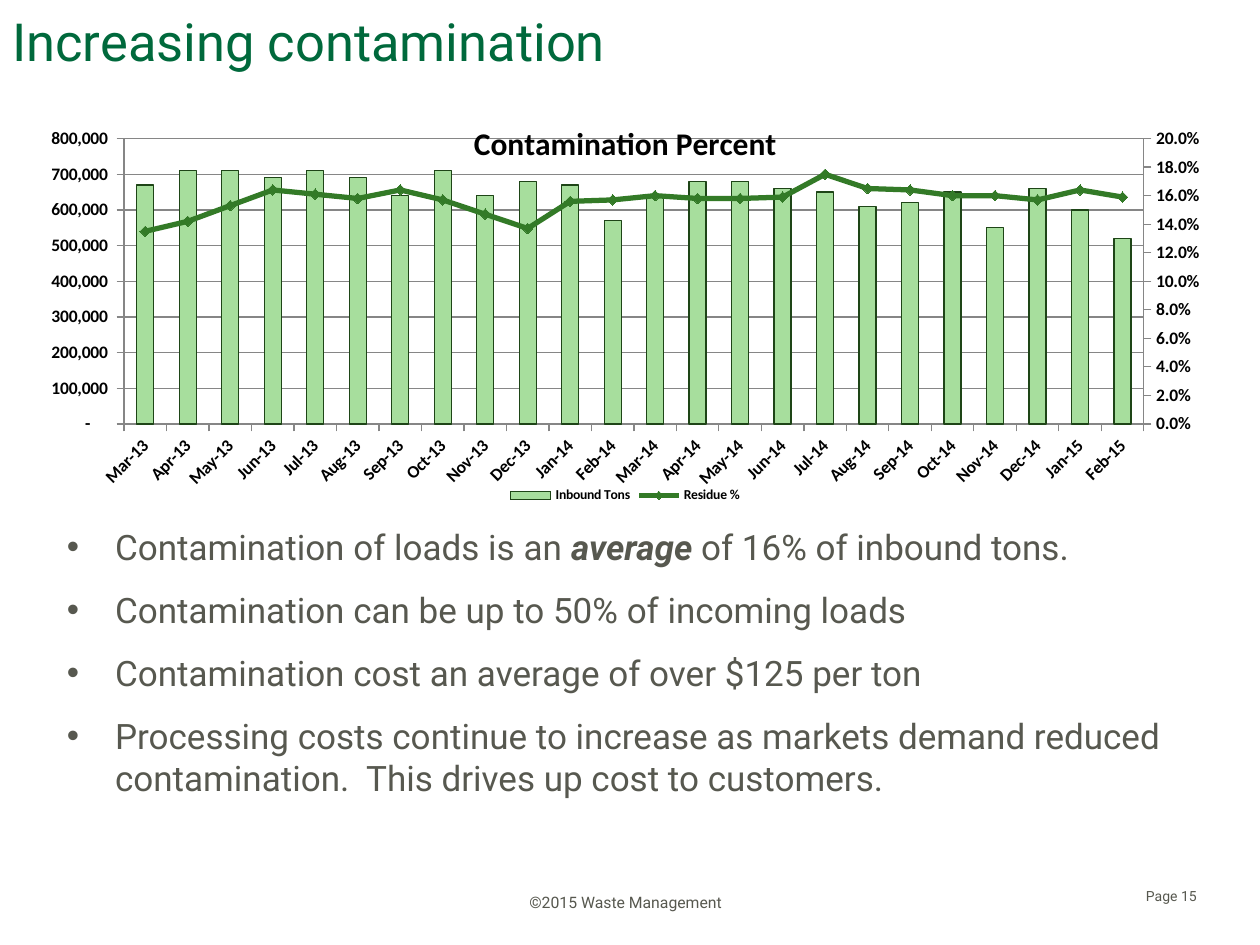
"""Build the contamination slide with a combined column and line chart."""
import copy

from lxml import etree
from pptx import Presentation
from pptx import util as u
from pptx.chart.data import CategoryChartData
from pptx.dml.color import RGBColor
from pptx.enum import chart as charts, text
from pptx.oxml import parse_xml
from pptx.oxml.ns import nsdecls, qn

COLORS = {
    "title": "00693C", "body": "57584F", "black": "000000", "grid": "868686",
    "column": "A7DE9D", "column_edge": "1E4517", "line": "337A27",
}
MONTHS = "Jan Feb Mar Apr May Jun Jul Aug Sep Oct Nov Dec".split()
CATEGORIES = [f"{MONTHS[i % 12]}-{13 + i // 12}" for i in range(2, 26)]
TONS_THOUSANDS = [670, 710, 710, 690, 710, 690, 640, 710, 640, 680, 670, 570,
                  640, 680, 680, 660, 650, 610, 620, 650, 550, 660, 600, 520]
RESIDUE = [0.135, 0.142, 0.153, 0.164, 0.161, 0.158, 0.164, 0.157,
           0.147, 0.137, 0.156, 0.157, 0.16, 0.158, 0.158, 0.159,
           0.175, 0.165, 0.164, 0.16, 0.16, 0.157, 0.164, 0.159]
BULLETS = [
    [("Contamination of loads is an ", False), ("average ", True),
     ("of 16% of inbound tons.", False)],
    [("Contamination can be up to 50% of incoming loads", False)],
    [("Contamination cost an average of over $125 per ton", False)],
    [("Processing costs continue to increase as markets demand reduced "
      "contamination.  This drives up cost to customers.", False)],
]
TONS_FORMAT = r'_(* #,##0_);_(* \(#,##0\);_(* "-"??_);_('


def color(name):
    return RGBColor.from_string(COLORS[name])


def style_font(font, size, color_name, bold=False, name="Roboto"):
    font.name, font.size, font.bold = name, u.Pt(size), bold
    font.color.rgb = color(color_name)


def add_run(paragraph, words, size, color_name, emphasis=False):
    run = paragraph.add_run()
    run.text = words
    style_font(run.font, size, color_name, emphasis)
    run.font.italic = emphasis


def add_box(slide, left, top, width, height, anchor=text.MSO_ANCHOR.TOP):
    shape = slide.shapes.add_textbox(u.Cm(left), u.Cm(top), u.Cm(width), u.Cm(height))
    frame = shape.text_frame
    frame.word_wrap = True
    frame.vertical_anchor = anchor
    frame.margin_left = frame.margin_top = frame.margin_right = frame.margin_bottom = 0
    return frame


def add_label(slide, box, words, size, color_name, align, anchor=text.MSO_ANCHOR.BOTTOM):
    paragraph = add_box(slide, *box, anchor).paragraphs[0]
    paragraph.alignment = align
    add_run(paragraph, words, size, color_name)
    return paragraph


def add_bullets(slide, box, items):
    frame = add_box(slide, *box)
    for index, runs in enumerate(items):
        paragraph = frame.add_paragraph() if index else frame.paragraphs[0]
        paragraph.space_before = u.Pt(6 if index else 0)
        paragraph.space_after = u.Pt(6)
        properties = paragraph._p.get_or_add_pPr()
        properties.set("marL", str(u.Cm(0.97)))
        properties.set("indent", str(-u.Cm(0.97)))
        etree.SubElement(properties, qn("a:buFont")).set("typeface", "Arial")
        etree.SubElement(properties, qn("a:buChar")).set("char", "•")
        for words, emphasis in runs:
            add_run(paragraph, words, 20, "body", emphasis)


def remove_children(parent, tag):
    for child in parent.findall(qn(tag)):
        parent.remove(child)


def set_plot_layout(plot_area, x, y, width, height):
    remove_children(plot_area, "c:layout")
    values = {"x": x, "y": y, "w": width, "h": height}
    sizes = "".join(f'<c:{key} val="{value}"/>' for key, value in values.items())
    plot_area.insert(0, parse_xml(
        f'<c:layout {nsdecls("c")}><c:manualLayout><c:layoutTarget val="inner"/>'
        f'<c:xMode val="edge"/><c:yMode val="edge"/>{sizes}</c:manualLayout></c:layout>'))


def move_to_line_plot(plot_area):
    """Move the second column series to a line plot on the right axis."""
    columns = plot_area.find(qn("c:barChart"))
    series = columns.findall(qn("c:ser"))[1]
    remove_children(series, "c:invertIfNegative")
    lines = parse_xml(
        f'<c:lineChart {nsdecls("c")}><c:grouping val="standard"/><c:varyColors val="0"/>'
        '<c:marker val="1"/><c:axId val="5001"/><c:axId val="5002"/></c:lineChart>')
    lines.insert(2, series)
    columns.addnext(lines)


def set_axis_value(axis, tag, value):
    """Set one value of an axis, adding the element after the crossing if missing."""
    element = axis.find(qn(f"c:{tag}"))
    if element is None:
        element = etree.Element(qn(f"c:{tag}"))
        axis.find(qn("c:crossAx")).addnext(element)
    element.set("val", value)


def add_right_axis(plot_area):
    """Add a hidden category axis and a percent axis at the right."""
    category_axis = copy.deepcopy(plot_area.find(qn("c:catAx")))
    value_axis = copy.deepcopy(plot_area.find(qn("c:valAx")))
    remove_children(value_axis, "c:majorGridlines")
    settings = (
        (category_axis, {"axId": "5001", "crossAx": "5002", "delete": "1"}),
        (value_axis, {"axId": "5002", "crossAx": "5001", "axPos": "r",
                      "crosses": "max", "majorUnit": "0.02"}),
    )
    last = plot_area.find(qn("c:valAx"))
    for axis, values in settings:
        for tag, value in values.items():
            set_axis_value(axis, tag, value)
        last.addnext(axis)
        last = axis
    value_axis.find(qn("c:scaling")).find(qn("c:max")).set("val", "0.2")
    value_axis.find(qn("c:numFmt")).set("formatCode", "0.0%")


def style_axes(chart):
    for axis in (chart.category_axis, chart.value_axis):
        style_font(axis.tick_labels.font, 10, "black", True, "Calibri")
        axis.major_tick_mark = charts.XL_TICK_MARK.OUTSIDE
        axis.minor_tick_mark = charts.XL_TICK_MARK.NONE
        axis.format.line.color.rgb = color("grid")
        axis.format.line.width = u.Pt(0.75)
    body = chart.category_axis._element.find(qn("c:txPr")).find(qn("a:bodyPr"))
    body.set("rot", "-2700000")
    body.set("vert", "horz")
    axis = chart.value_axis
    axis.minimum_scale, axis.maximum_scale, axis.major_unit = 0, 800000, 100000
    axis.tick_labels.number_format = TONS_FORMAT
    axis.tick_labels.number_format_is_linked = False
    axis.major_gridlines.format.line.color.rgb = color("grid")
    axis.major_gridlines.format.line.width = u.Pt(0.75)


def style_series(chart):
    columns, lines = chart.plots
    columns.gap_width = 150
    columns.vary_by_categories = False
    tons, residue = columns.series[0], lines.series[0]
    residue.smooth = False
    residue.marker.style = charts.XL_MARKER_STYLE.DIAMOND
    residue.marker.size = 6
    for part, fill in ((tons, "column"), (residue.marker, "line")):
        part.format.fill.solid()
        part.format.fill.fore_color.rgb = color(fill)
    for part, edge, width in ((tons, "column_edge", 0.75), (residue, "line", 3),
                              (residue.marker, "line", 0.75)):
        part.format.line.color.rgb = color(edge)
        part.format.line.width = u.Pt(width)


def add_contamination_chart(slide, *box):
    data = CategoryChartData()
    data.categories = CATEGORIES
    data.add_series("Inbound Tons", [tons * 1000 for tons in TONS_THOUSANDS], "#,##0")
    data.add_series("Residue %", RESIDUE, "0.0%")
    kind = charts.XL_CHART_TYPE.COLUMN_CLUSTERED
    chart = slide.shapes.add_chart(kind, *map(u.Cm, box), data).chart
    style_font(chart.font, 10, "black", name="Calibri")
    title = chart.chart_title.text_frame.paragraphs[0].add_run()
    title.text = "Contamination Percent"
    style_font(title.font, 18, "black", True, "Calibri")
    chart.has_legend = True
    chart.legend.position = charts.XL_LEGEND_POSITION.BOTTOM
    chart.legend.include_in_layout = False
    style_font(chart.legend.font, 7.8, "black", True, "Calibri")
    style_axes(chart)
    plot_area = chart._chartSpace.chart.plotArea
    set_plot_layout(plot_area, 0.068, 0.093, 0.879, 0.699)
    move_to_line_plot(plot_area)
    add_right_axis(plot_area)
    style_series(chart)


def main():
    presentation = Presentation()
    presentation.slide_width, presentation.slide_height = u.Cm(25.4), u.Cm(19.05)
    slide = presentation.slides.add_slide(presentation.slide_layouts[6])
    align = text.PP_ALIGN
    title = add_label(slide, (0.25, 0.33, 24.51, 2.62), "Increasing contamination",
                      30, "title", align.LEFT, text.MSO_ANCHOR.TOP)
    title.line_spacing = 0.9
    add_bullets(slide, (1.35, 10.59, 22.4, 6.91), BULLETS)
    add_label(slide, (22.56, 17.86, 1.57, 0.38), "Page 15", 8, "body", align.RIGHT)
    add_label(slide, (9.45, 17.96, 6.32, 0.41), "©2015 Waste Management", 9, "body", align.CENTER)
    add_contamination_chart(slide, 0.91, 2.03, 23.39, 8.23)
    presentation.save("out.pptx")


if __name__ == "__main__":
    main()
